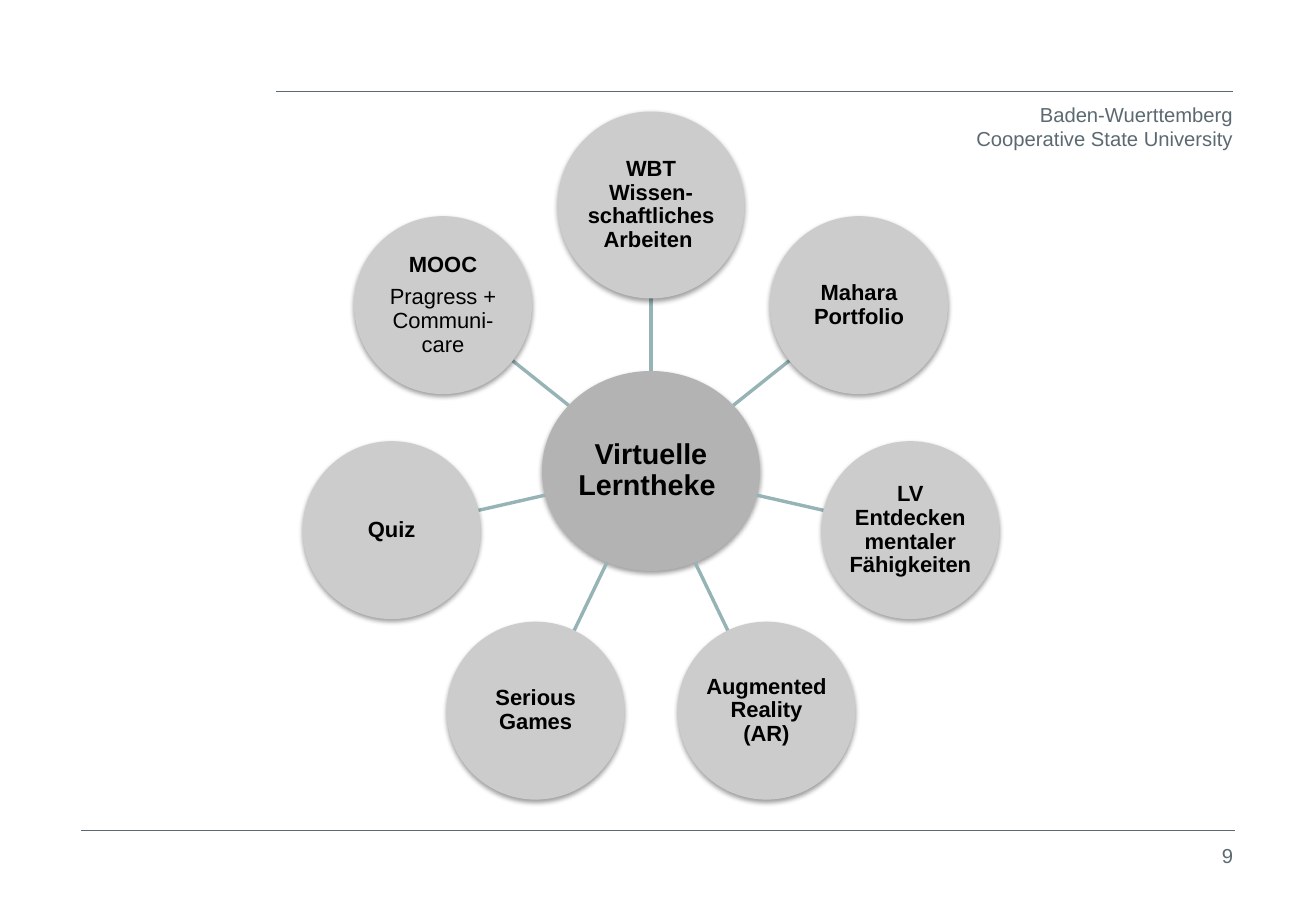
"""Draw a hub with seven learning offers around it."""
from math import cos, hypot, pi, sin

from lxml import etree
from pptx import Presentation
from pptx.dml.color import RGBColor
from pptx.enum.shapes import MSO_CONNECTOR, MSO_SHAPE
from pptx.enum.text import MSO_ANCHOR, PP_ALIGN
from pptx.oxml import parse_xml
from pptx.oxml.ns import nsdecls, qn
from pptx.util import Pt

HUB = ["Virtuelle Lerntheke "]
NODES = [
    ["WBT Wissen-schaftliches Arbeiten "],
    ["Mahara Portfolio"],
    ["LV Entdecken mentaler Fähigkeiten"],
    ["Augmented Reality (AR)"],
    ["Serious Games"],
    ["Quiz"],
    ["MOOC", "Pragress + Communi-care"],
]
RULES = [(276, 1233, 91), (81, 1235, 830)]
NOTES = [
    (841, 96, 404, 61, False, ["Baden-Wuerttemberg", "Cooperative State University"]),
    (1124, 837, 121, 61, True, ["9"]),
]

PX = 7526
WIDTH, HEIGHT = 1316, 911
MID_X, MID_Y = 651, 471
HUB_W, HUB_H = 218, 200
RING = 266
TOP, SIDE = 187, 178

SLATE = RGBColor(0x5C, 0x69, 0x71)
TEAL = RGBColor(0x96, 0xB3, 0xB6)
DARK = RGBColor(0xB3, 0xB3, 0xB3)
LIGHT = RGBColor(0xCC, 0xCC, 0xCC)
BLACK = RGBColor(0, 0, 0)
SHADOW = (
    f'<a:effectLst {nsdecls("a")}><a:outerShdw blurRad="39400" dist="20300" '
    'dir="5400000" rotWithShape="0"><a:srgbClr val="000000">'
    '<a:alpha val="38000"/></a:srgbClr></a:outerShdw></a:effectLst>'
)


def emu(*sizes):
    return [round(size * PX) for size in sizes]


def style(para, size, color, bold=False):
    font = para.font
    font.name, font.size, font.bold = "Arial", Pt(size), bold
    font.color.rgb = color


def line(slide, ends, color, width):
    rule = slide.shapes.add_connector(MSO_CONNECTOR.STRAIGHT, *emu(*ends))
    rule.line.color.rgb = color
    rule.line.width = Pt(width)
    etree.SubElement(rule._element.spPr, qn("a:effectLst"))


def note(slide, left, top, width, height, wrap, rows):
    frame = slide.shapes.add_textbox(*emu(left, top, width, height)).text_frame
    frame.word_wrap = wrap
    para = frame.paragraphs[0]
    para.alignment = PP_ALIGN.RIGHT
    for index, row in enumerate(rows):
        if index:
            para.add_line_break()
        para.add_run().text = row
    style(para, 12, SLATE)


def disc(slide, x, y, width, height, fill, size, texts):
    box = emu(x - width / 2, y - height / 2, width, height)
    shape = slide.shapes.add_shape(MSO_SHAPE.OVAL, *box)
    shape.fill.solid()
    shape.fill.fore_color.rgb = fill
    shape.line.fill.background()
    shape._element.spPr.append(parse_xml(SHADOW))
    frame = shape.text_frame
    frame.word_wrap = True
    frame.vertical_anchor = MSO_ANCHOR.MIDDLE
    frame.margin_left = frame.margin_right = PX
    frame.margin_top = frame.margin_bottom = PX
    for index, text in enumerate(texts):
        para = frame.add_paragraph() if index else frame.paragraphs[0]
        para.text = text
        para.alignment = PP_ALIGN.CENTER
        para.line_spacing = 0.9
        if index:
            para.space_before = Pt(5)
        style(para, size, BLACK, index == 0)


def main():
    deck = Presentation()
    deck.slide_width, deck.slide_height = emu(WIDTH, HEIGHT)
    slide = deck.slides.add_slide(deck.slide_layouts[6])
    for start, end, y in RULES:
        line(slide, (start, y, end, y), SLATE, 0.25)
    for item in NOTES:
        note(slide, *item)

    disc(slide, MID_X, MID_Y, HUB_W, HUB_H, DARK, 17, HUB)
    for index, texts in enumerate(NODES):
        turn = 2 * pi * index / len(NODES)
        dx, dy = sin(turn), -cos(turn)
        size = SIDE if index else TOP
        near = 1 / hypot(2 * dx / HUB_W, 2 * dy / HUB_H)
        far = RING - size / 2
        ends = [MID_X + near * dx, MID_Y + near * dy,
                MID_X + far * dx, MID_Y + far * dy]
        line(slide, ends, TEAL, 2)
        disc(slide, MID_X + RING * dx, MID_Y + RING * dy,
             size, size, LIGHT, 13, texts)
    deck.save("out.pptx")


if __name__ == "__main__":
    main()
